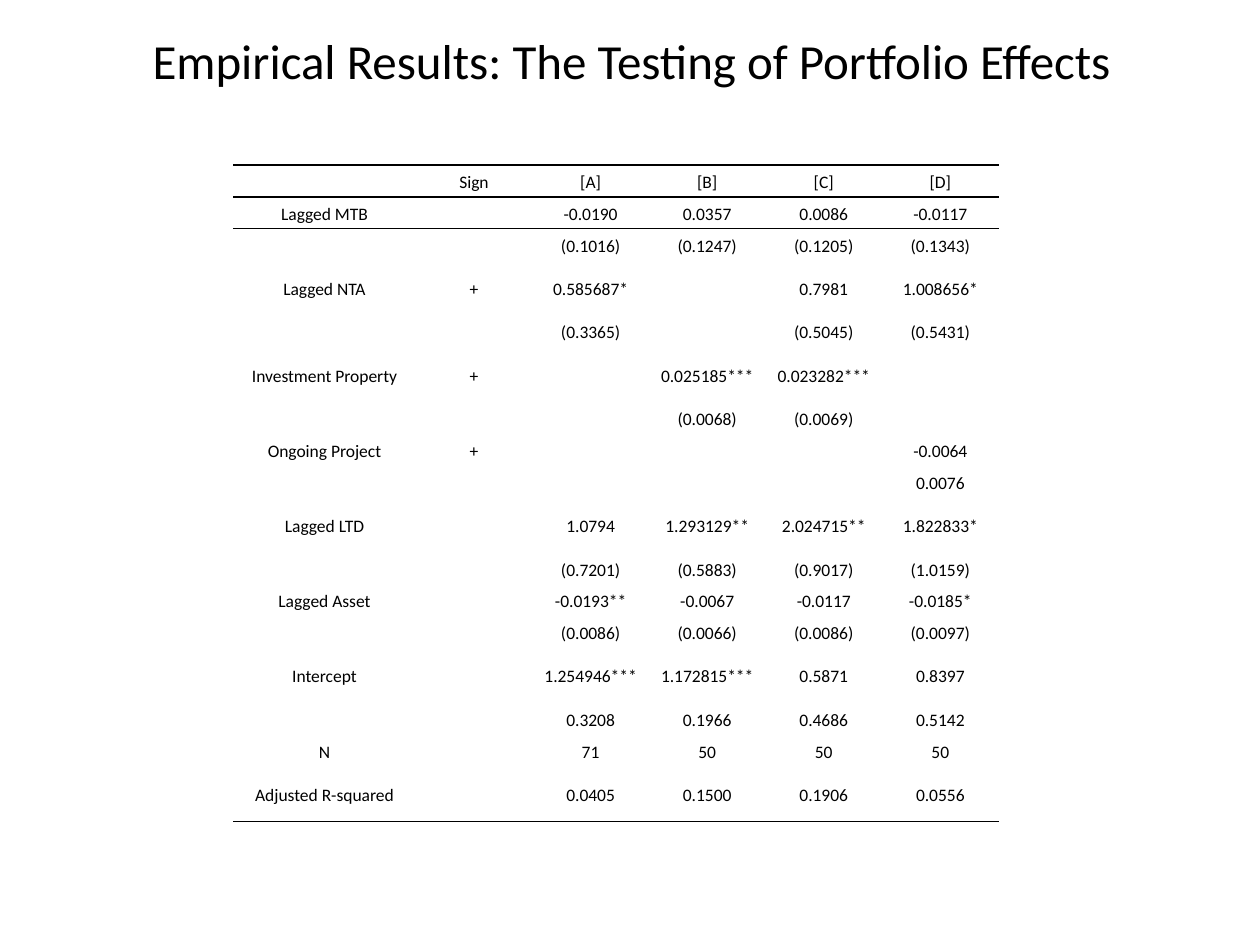
import pptx
import pptx.dml.color
import pptx.enum.text
import pptx.oxml.ns
import pptx.util
import lxml.etree

Cm = pptx.util.Cm
Pt = pptx.util.Pt

PLAIN = "{2D5ABB26-0587-4C30-8999-92F81FD0307C}"
BLACK = "000000"
SHORT, TALL = 0.64, 1.11
WIDTHS = [3.68] + [2.35] * 5
TALL_ROWS = {"Lagged NTA", "Investment Property", "Lagged LTD", "Intercept",
             "Adjusted R-squared"}
ROWS = [
    ["", "Sign", "[A]", "[B]", "[C]", "[D]"],
    ["Lagged MTB", "", "-0.0190", "0.0357", "0.0086", "-0.0117"],
    ["", "", "(0.1016)", "(0.1247)", "(0.1205)", "(0.1343)"],
    ["Lagged NTA", "+", "0.585687*", "", "0.7981", "1.008656*"],
    ["", "", "(0.3365)", "", "(0.5045)", "(0.5431)"],
    ["Investment Property", "+", "", "0.025185***", "0.023282***", ""],
    ["", "", "", "(0.0068)", "(0.0069)", ""],
    ["Ongoing Project", "+", "", "", "", "-0.0064"],
    ["", "", "", "", "", "0.0076"],
    ["Lagged LTD", "", "1.0794", "1.293129**", "2.024715**", "1.822833*"],
    ["", "", "(0.7201)", "(0.5883)", "(0.9017)", "(1.0159)"],
    ["Lagged Asset", "", "-0.0193**", "-0.0067", "-0.0117", "-0.0185*"],
    ["", "", "(0.0086)", "(0.0066)", "(0.0086)", "(0.0097)"],
    ["Intercept", "", "1.254946***", "1.172815***", "0.5871", "0.8397"],
    ["", "", "0.3208", "0.1966", "0.4686", "0.5142"],
    ["N", "", "71", "50", "50", "50"],
    ["Adjusted R-squared", "", "0.0405", "0.1500", "0.1906", "0.0556"],
]


def paint(hue):
    return pptx.dml.color.RGBColor.from_string(hue)


def child(node, tag, **attrs):
    return lxml.etree.SubElement(node, pptx.oxml.ns.qn(tag), attrs)


def write(frame, text, size=10, hue=BLACK, face="Calibri", lead=1.0):
    frame.word_wrap = True
    para = frame.paragraphs[0]
    para.alignment = pptx.enum.text.PP_ALIGN.CENTER
    para.line_spacing = lead
    if text:
        run = para.add_run()
        run.text = text
        run.font.size = Pt(size)
        run.font.name = face
        run.font.color.rgb = paint(hue)
    else:
        child(para._p, "a:endParaRPr", sz=str(size * 100))


def rule(cell, side, hue=BLACK, width=1):
    line = child(cell._tc.get_or_add_tcPr(), "a:ln" + side, w=str(Pt(width)))
    child(child(line, "a:solidFill"), "a:srgbClr", val=hue)


def fill_cell(cell, text, sides):
    for side in sides:
        rule(cell, side)
    cell.fill.background()
    cell.margin_left = cell.margin_right = Cm(0.18)
    cell.margin_top = cell.margin_bottom = 0
    cell.vertical_anchor = pptx.enum.text.MSO_ANCHOR.MIDDLE
    write(cell.text_frame, text, lead=1.15)


def add_title(slide, text):
    box = slide.shapes.add_textbox(Cm(1.3), Cm(0.53), Cm(22.86), Cm(1.37))
    box.text_frame.vertical_anchor = pptx.enum.text.MSO_ANCHOR.MIDDLE
    write(box.text_frame, text, size=28)


def add_grid(slide, rows):
    highs = [TALL if row[0] in TALL_ROWS else SHORT for row in rows]
    frame = slide.shapes.add_table(len(rows), len(WIDTHS), Cm(4.7), Cm(3.33),
                                   Cm(sum(WIDTHS)), Cm(sum(highs)))
    table = frame.table
    table.first_row = table.horz_banding = False
    table._tbl.tblPr.find(pptx.oxml.ns.qn("a:tableStyleId")).text = PLAIN
    for col, width in zip(table.columns, WIDTHS):
        col.width = Cm(width)
    edges = {0: "TB", 1: "T", len(rows) - 1: "B"}
    for r, row in enumerate(rows):
        table.rows[r].height = Cm(highs[r])
        for c, text in enumerate(row):
            fill_cell(table.cell(r, c), text, edges.get(r, ""))


def main():
    deck = pptx.Presentation()
    deck.slide_width, deck.slide_height = Cm(25.4), Cm(19.05)
    slide = deck.slides.add_slide(deck.slide_layouts[6])
    add_title(slide, "Empirical Results: The Testing of Portfolio Effects")
    add_grid(slide, ROWS)
    deck.save("out.pptx")


if __name__ == "__main__":
    main()
